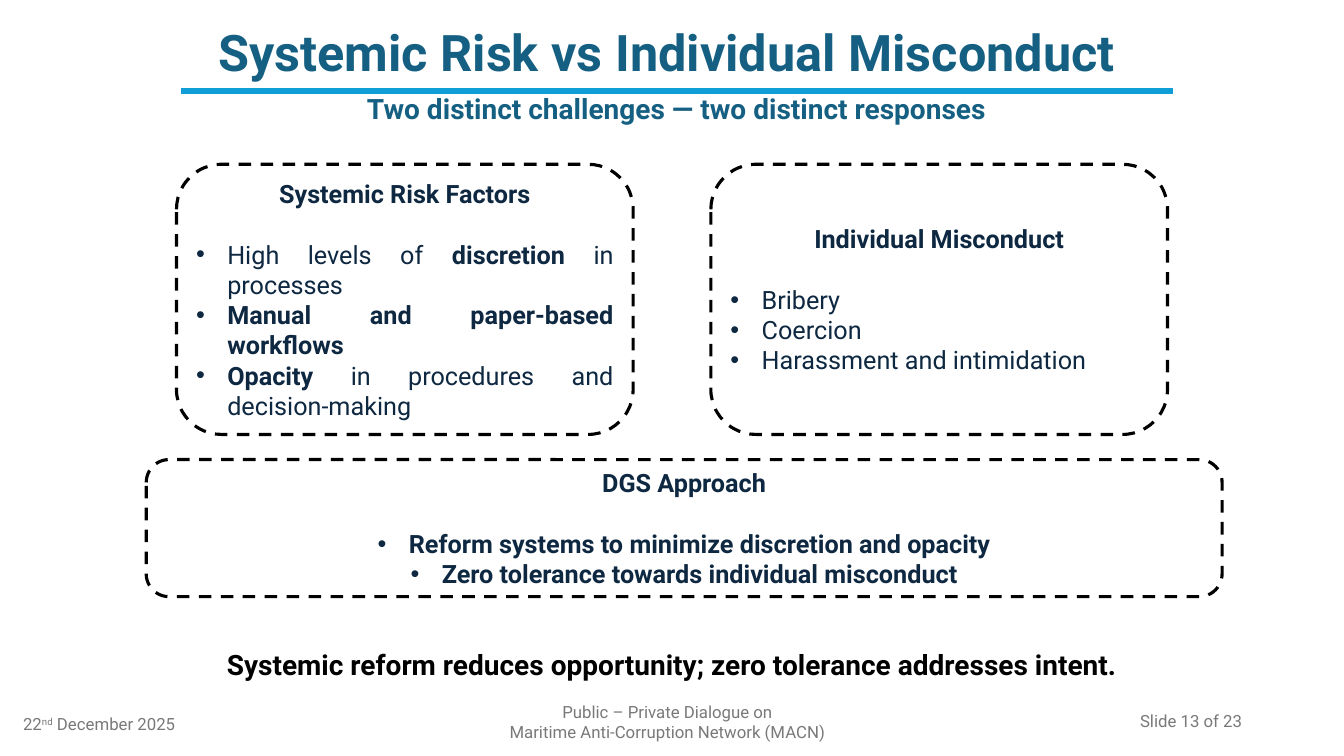
from dataclasses import dataclass

from lxml import etree
from pptx import Presentation
from pptx.dml.color import RGBColor
from pptx.enum.dml import MSO_LINE
from pptx.enum.shapes import MSO_CONNECTOR, MSO_SHAPE
from pptx.enum.text import MSO_ANCHOR, MSO_AUTO_SIZE, PP_ALIGN
from pptx.oxml.ns import qn
from pptx.util import Inches, Pt

LEFT, CENTER, RIGHT, JUSTIFY = PP_ALIGN.LEFT, PP_ALIGN.CENTER, PP_ALIGN.RIGHT, PP_ALIGN.JUSTIFY
TOP, MIDDLE = MSO_ANCHOR.TOP, MSO_ANCHOR.MIDDLE
COMPARISON_LAYOUT = 4
SLIDE_WIDTH, SLIDE_HEIGHT = Inches(13.33), Inches(7.5)
CORNER_INSET = 0.05


@dataclass(frozen=True)
class Theme:
    font: str = "Roboto"
    heading: str = "156082"
    accent: str = "0F9ED5"
    body: str = "0E2841"
    ink: str = "000000"
    muted: str = "797979"
    title_size: int = 36
    lead_size: int = 20
    body_size: int = 18
    footer_size: int = 12
    heading_gap: float = 21.6
    rule_width: float = 4.5
    outline_width: float = 2.25


THEME = Theme()


def across(share):
    return int(SLIDE_WIDTH * share / 100)


def down(share):
    return int(SLIDE_HEIGHT * share / 100)


def area(left, top, width, height):
    return across(left), down(top), across(width), down(height)


def move(placeholder, box):
    placeholder.left, placeholder.top, placeholder.width, placeholder.height = box
    return placeholder


def prepare_frame(holder, anchor):
    frame = holder.text_frame
    frame.word_wrap = True
    frame.auto_size = MSO_AUTO_SIZE.NONE
    frame.vertical_anchor = anchor
    return frame


def set_bullet(paragraph, bulleted):
    properties = paragraph._p.get_or_add_pPr()
    indent = Inches(0.31) if bulleted else 0
    properties.set("marL", str(indent))
    properties.set("indent", str(-indent))
    if bulleted:
        etree.SubElement(properties, qn("a:buChar")).set("char", "•")
    else:
        etree.SubElement(properties, qn("a:buNone"))


def style_paragraph(paragraph, size, color, align, spacing=1.0):
    paragraph.alignment = align
    paragraph.line_spacing = spacing
    paragraph.space_before = Pt(0)
    for run in paragraph.runs:
        run.font.name = THEME.font
        run.font.size = Pt(size)
        run.font.color.rgb = RGBColor.from_string(color)


def write_lines(holder, text, size, color, align, bold=False, anchor=MIDDLE, spacing=1.0):
    frame = prepare_frame(holder, anchor)
    frame.text = text
    for paragraph in frame.paragraphs:
        set_bullet(paragraph, False)
        style_paragraph(paragraph, size, color, align, spacing)
        for run in paragraph.runs:
            run.font.bold = bold
    return frame


def add_label(slide, box, text, size, color, align, bold=False):
    return write_lines(slide.shapes.add_textbox(*box), text, size, color, align, bold)


def add_rule(slide, left, right, top):
    rule = slide.shapes.add_connector(
        MSO_CONNECTOR.STRAIGHT, across(left), down(top), across(right), down(top))
    rule.line.color.rgb = RGBColor.from_string(THEME.accent)
    rule.line.width = Pt(THEME.rule_width)
    etree.SubElement(rule._element.spPr, qn("a:effectLst"))


def add_outline(slide, box):
    outline = slide.shapes.add_shape(MSO_SHAPE.ROUNDED_RECTANGLE, *box)
    outline.shadow.inherit = False
    outline.fill.background()
    outline.line.color.rgb = RGBColor.from_string(THEME.ink)
    outline.line.width = Pt(THEME.outline_width)
    outline.line.dash_style = MSO_LINE.DASH


def add_card(slide, placeholder, box, heading, items, align):
    add_outline(slide, box)
    frame = write_lines(move(placeholder, box), heading,
                        THEME.body_size, THEME.body, CENTER, bold=True)
    side = Inches(0.06) + int(min(box[2:]) * CORNER_INSET)
    frame.margin_left = frame.margin_right = side
    frame.margin_top = frame.margin_bottom = Inches(0.06)
    frame.paragraphs[0].space_after = Pt(THEME.heading_gap)
    for item in items:
        paragraph = frame.add_paragraph()
        set_bullet(paragraph, True)
        for position, part in enumerate(item.split("**")):
            if part:
                run = paragraph.add_run()
                run.text = part
                run.font.bold = position % 2 == 1
        style_paragraph(paragraph, THEME.body_size, THEME.body, align)


def add_date(slide, box):
    frame = add_label(slide, box, "22", THEME.footer_size, THEME.muted, LEFT)
    date = frame.paragraphs[0]
    ordinal, month = date.add_run(), date.add_run()
    ordinal.text, month.text = "nd", " December 2025"
    style_paragraph(date, THEME.footer_size, THEME.muted, LEFT)
    ordinal._r.get_or_add_rPr().set("baseline", "30000")


def main():
    deck = Presentation()
    deck.slide_width, deck.slide_height = SLIDE_WIDTH, SLIDE_HEIGHT
    slide = deck.slides.add_slide(deck.slide_layouts[COMPARISON_LAYOUT])
    title, subtitle, systemic, approach, individual = slide.placeholders

    write_lines(move(title, area(9.6, 1.87, 80.05, 10.8)),
                "Systemic Risk vs Individual Misconduct",
                THEME.title_size, THEME.heading, CENTER, bold=True, spacing=0.9)
    add_rule(slide, 13.5, 87.25, 12)
    write_lines(move(subtitle, area(13.5, 11.47, 73.67, 5.87)),
                "Two distinct challenges — two distinct responses",
                THEME.lead_size, THEME.heading, CENTER, bold=True, anchor=TOP)

    cards = [
        (systemic, "Systemic Risk Factors",
         ["High levels of **discretion** in processes",
          "**Manual and paper-based workflows**",
          "**Opacity** in procedures and decision-making"]),
        (individual, "Individual Misconduct",
         ["Bribery", "Coercion", "Harassment and intimidation"]),
    ]
    for column, (placeholder, heading, items) in enumerate(cards):
        box = area(13.13 + 39.76 * column, 21.73, 33.98, 35.73)
        add_card(slide, placeholder, box, heading, items, JUSTIFY)
    add_card(slide, approach, area(10.88, 60.8, 80.05, 18.13), "DGS Approach",
             ["**Reform systems to minimize discretion and opacity**",
              "**Zero tolerance towards individual misconduct**"], CENTER)

    add_label(slide, area(9.6, 84.67, 80.8, 6.4),
              "Systemic reform reduces opportunity; zero tolerance addresses intent.",
              THEME.lead_size, THEME.ink, CENTER, bold=True)
    add_date(slide, area(0.98, 93.07, 22.5, 5.33))
    add_label(slide, area(32.78, 92.8, 33.76, 5.33),
              "Public – Private Dialogue on\nMaritime Anti-Corruption Network (MACN)",
              THEME.footer_size, THEME.muted, CENTER)
    add_label(slide, area(70.67, 92.67, 22.5, 5.33), "Slide 13 of 23",
              THEME.footer_size, THEME.muted, RIGHT)
    deck.save("out.pptx")


if __name__ == "__main__":
    main()
